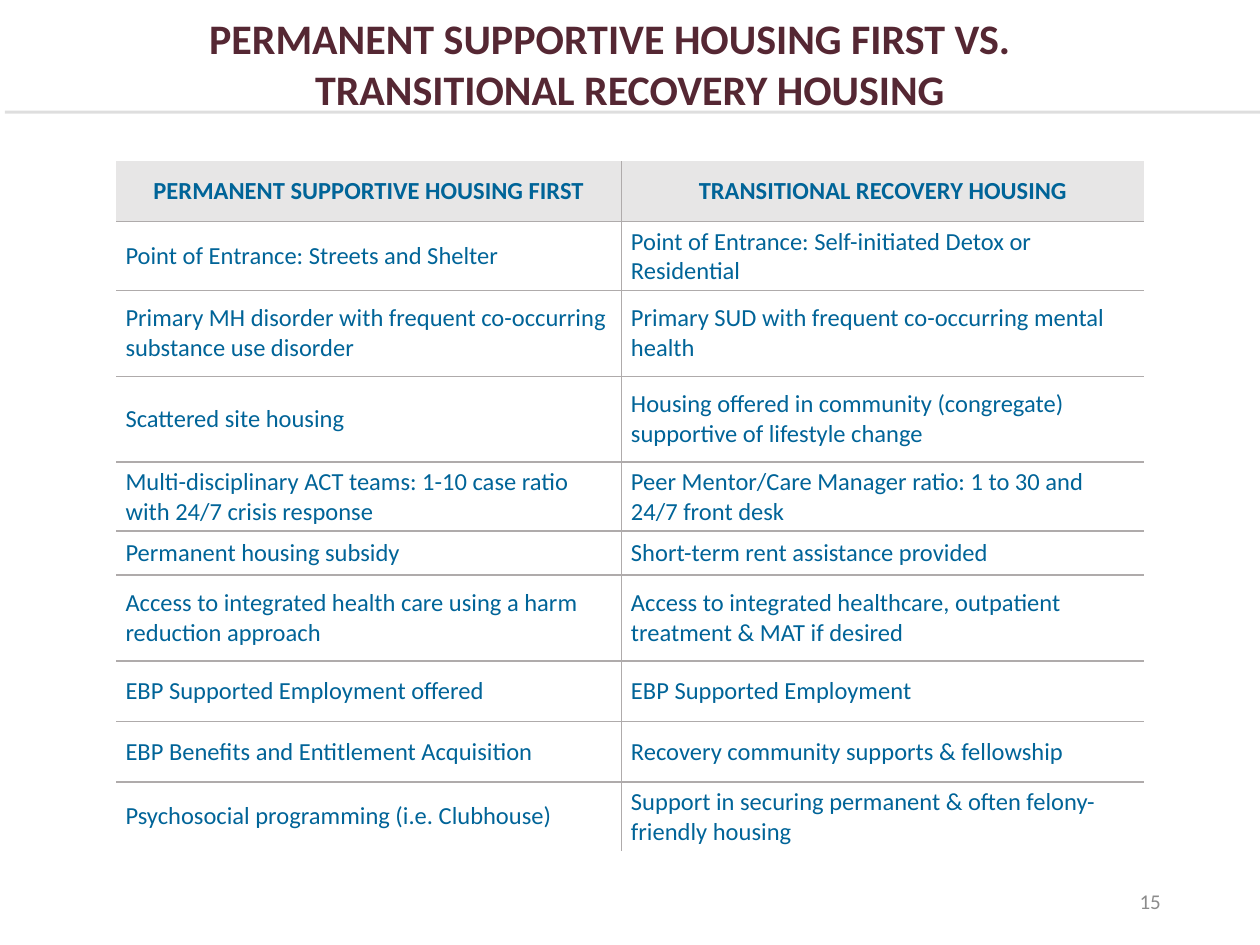
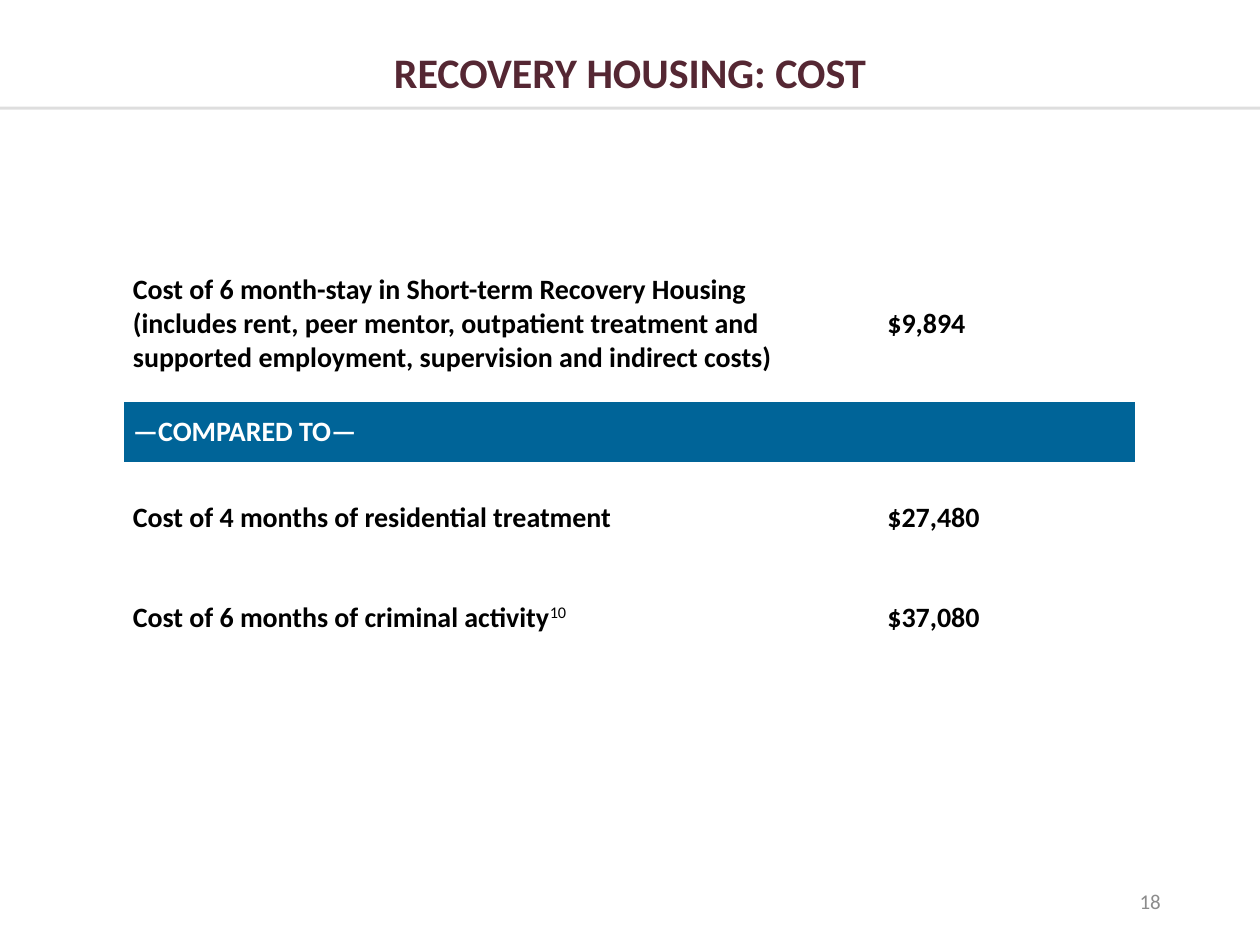
from lxml.etree import SubElement
from pptx import Presentation
from pptx.dml.color import RGBColor
from pptx.enum.shapes import MSO_CONNECTOR
from pptx.enum.text import MSO_ANCHOR, PP_ALIGN
from pptx.oxml.ns import qn
from pptx.util import Cm, Pt

# Content
COMPARISON_TITLE = ["PERMANENT SUPPORTIVE HOUSING FIRST VS.", "TRANSITIONAL RECOVERY HOUSING"]
COMPARISON = [
    ("PERMANENT SUPPORTIVE HOUSING FIRST", "TRANSITIONAL RECOVERY HOUSING"),
    ("Point of Entrance: Streets and Shelter",
     "Point of Entrance: Self-initiated Detox or Residential"),
    ("Primary MH disorder with frequent co-occurring substance use disorder",
     "Primary SUD with frequent co-occurring mental health"),
    ("Scattered site housing",
     "Housing offered in community (congregate) supportive of lifestyle change"),
    ("Multi-disciplinary ACT teams: 1-10 case ratio with 24/7 crisis response",
     "Peer Mentor/Care Manager ratio: 1 to 30 and 24/7 front desk"),
    ("Permanent housing subsidy", "Short-term rent assistance provided"),
    ("Access to integrated health care using a harm reduction approach",
     "Access to integrated healthcare, outpatient treatment & MAT if desired"),
    ("EBP Supported Employment offered", "EBP Supported Employment"),
    ("EBP Benefits and Entitlement Acquisition", "Recovery community supports & fellowship"),
    ("Psychosocial programming (i.e. Clubhouse)",
     "Support in securing permanent & often felony-friendly housing"),
]
COMPARISON_COLUMNS = [10.19, 10.54]
COMPARISON_ROWS = [1.22, 1.22, 1.73, 1.73, 1.27, 0.89, 1.73, 1.22, 1.22, 1.27]

COST_TITLE = ["RECOVERY HOUSING: COST"]
COSTS = [
    ("Cost of 6 month-stay in Short-term Recovery Housing\v(includes rent, peer mentor, "
     "outpatient treatment and supported employment, supervision and indirect costs)", "$9,894"),
    ("—COMPARED TO—", ""),
    ("Cost of 4 months of residential treatment", "$27,480"),
    ("Cost of 6 months of criminal activity", "$37,080"),
]
COST_COLUMNS = [15.21, 5.18]
COST_ROWS = [3.15, 1.22, 2.24, 1.78]
DIVIDER_ROW = 1
FOOTNOTE = "10"

# Shared look
FONT = "Calibri"
MAROON = RGBColor(0x55, 0x27, 0x33)
BLUE = RGBColor(0x00, 0x64, 0x98)
HEADER_GRAY = RGBColor(0xE7, 0xE6, 0xE6)
BORDER_GRAY = RGBColor(0xAF, 0xAB, 0xAB)
NUMBER_GRAY = RGBColor(0x8C, 0x8C, 0x8C)
BLACK = RGBColor(0, 0, 0)
WHITE = RGBColor(0xFF, 0xFF, 0xFF)
PAGE_WIDTH, PAGE_HEIGHT = 25.4, 19.05
PLAIN_TABLE_STYLE = "{2D5ABB26-0587-4C30-8999-92F81FD0307C}"


def style(para, size, color, bold=False, align=PP_ALIGN.LEFT):
    para.alignment = align
    para.font.name = FONT
    para.font.size = Pt(size)
    para.font.bold = bold
    para.font.color.rgb = color


def add_text(page, lines, left, top, width, height, *look):
    box = page.shapes.add_textbox(Cm(left), Cm(top), Cm(width), Cm(height))
    frame = box.text_frame
    frame.word_wrap = True
    frame.text = "\n".join(lines)
    for para in frame.paragraphs:
        style(para, *look)
    return frame


def add_page(deck, title, title_top, title_height, rule_left, rule_top, number):
    page = deck.slides.add_slide(deck.slide_layouts[6])
    # Page number
    footer = add_text(page, [number], 17.93, 17.65, 5.72, 1.02,
                      12, NUMBER_GRAY, False, PP_ALIGN.RIGHT)
    footer.vertical_anchor = MSO_ANCHOR.MIDDLE
    # Faint rule under the title
    rule = page.shapes.add_connector(MSO_CONNECTOR.STRAIGHT, Cm(rule_left), Cm(rule_top),
                                     Cm(PAGE_WIDTH), Cm(rule_top))
    rule.line.width = Pt(1.75)
    rule.line.color.rgb = BLACK
    color = rule.line._get_or_add_ln().find(".//" + qn("a:srgbClr"))
    SubElement(color, qn("a:alpha")).set("val", "12000")
    SubElement(rule._element.spPr, qn("a:effectLst"))
    # Title
    heading = add_text(page, title, 0, title_top, PAGE_WIDTH, title_height,
                       24, MAROON, True, PP_ALIGN.CENTER)
    return page, heading


def add_border(cell, side):
    line = SubElement(cell._tc.get_or_add_tcPr(), qn("a:ln" + side), w=str(Pt(1)))
    fill = SubElement(line, qn("a:solidFill"))
    SubElement(fill, qn("a:srgbClr"), val=str(BORDER_GRAY))


def add_grid(page, rows, left, top, widths, heights):
    shape = page.shapes.add_table(len(rows), len(widths), Cm(left), Cm(top),
                                  Cm(sum(widths)), Cm(sum(heights)))
    table = shape.table
    table.first_row = table.horz_banding = False
    table._tbl.tblPr.find(qn("a:tableStyleId")).text = PLAIN_TABLE_STYLE
    for column, width in zip(table.columns, widths):
        column.width = Cm(width)
    for row, height, texts in zip(table.rows, heights, rows):
        row.height = Cm(height)
        for cell, text in zip(row.cells, texts):
            cell.text = text
            cell.vertical_anchor = MSO_ANCHOR.MIDDLE
            cell.margin_left = cell.margin_right = Cm(0.19)
            cell.margin_top = cell.margin_bottom = Cm(0.1)
    return table


def fill_cell(cell, color):
    cell.fill.solid()
    cell.fill.fore_color.rgb = color


def build_comparison(deck):
    page, heading = add_page(deck, COMPARISON_TITLE, 0.13, 2.31, 0.1, 2.26, "15")
    # The first title line sits a little left of centre
    heading.margin_right = Cm(1.06)
    heading.paragraphs[1]._p.get_or_add_pPr().set("marL", str(Cm(0.81)))

    table = add_grid(page, COMPARISON, 2.34, 3.25, COMPARISON_COLUMNS, COMPARISON_ROWS)
    last_row = len(COMPARISON) - 1
    for r, row in enumerate(table.rows):
        for c, cell in enumerate(row.cells):
            # Inner borders only
            add_border(cell, "L" if c else "R")
            if r > 0:
                add_border(cell, "T")
            if r < last_row:
                add_border(cell, "B")
            header = r == 0
            if header:
                fill_cell(cell, HEADER_GRAY)
            else:
                cell.fill.background()
            style(cell.text_frame.paragraphs[0], 14, BLUE, header,
                  PP_ALIGN.CENTER if header else PP_ALIGN.LEFT)


def build_costs(deck):
    page, _ = add_page(deck, COST_TITLE, 0.81, 1.27, 0, 2.18, "18")
    table = add_grid(page, COSTS, 2.49, 4.95, COST_COLUMNS, COST_ROWS)
    for r, row in enumerate(table.rows):
        for cell in row.cells:
            divider = r == DIVIDER_ROW
            if divider:
                fill_cell(cell, BLUE)
            else:
                cell.fill.background()
            style(cell.text_frame.paragraphs[0], 16, WHITE if divider else BLACK, True)
    table.cell(DIVIDER_ROW, 0).merge(table.cell(DIVIDER_ROW, 1))

    # Footnote mark
    span = table.cell(len(COSTS) - 1, 0).text_frame.paragraphs[0].add_run()
    span.text = FOOTNOTE
    span.font.bold = False
    span.font._element.set("baseline", "30000")


def main():
    deck = Presentation()
    deck.slide_width, deck.slide_height = Cm(PAGE_WIDTH), Cm(PAGE_HEIGHT)
    build_comparison(deck)
    build_costs(deck)
    deck.save("out.pptx")


if __name__ == "__main__":
    main()
